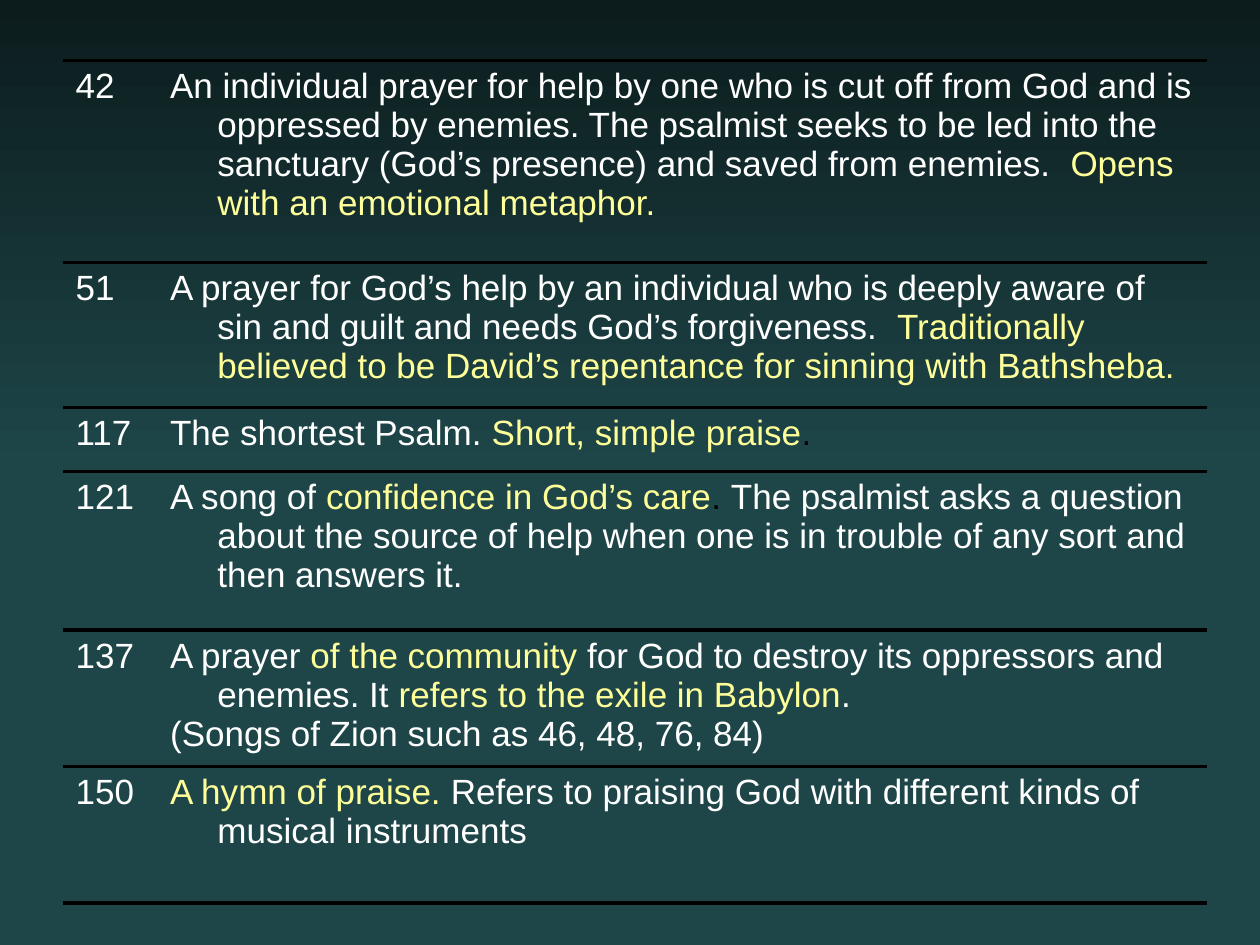
from copy import deepcopy
from pptx import Presentation
from pptx.dml.color import RGBColor
from pptx.oxml import parse_xml
from pptx.oxml.ns import nsdecls
from pptx.util import Pt

HUES = {"w": "FFFFFF", "y": "FFFF99", "k": "000000", "top": "0C1C1D", "base": "1E4649"}
STOPS = [(0, "top"), (0.5, "base"), (1, "base")]
COLS = [54, 600]
ROWS = [
    ("42", 115.2, [[
        ("An individual prayer for help by one who is cut off from God and is oppressed by enemies. "
         "The psalmist seeks to be led into the sanctuary (God’s presence) and saved from enemies.  ", "w"),
        ("Opens with an emotional metaphor.", "y")]]),
    ("51", 83, [[
        ("A prayer for God’s help by an individual who is deeply aware of sin and guilt "
         "and needs God’s forgiveness.  ", "w"),
        ("Traditionally believed to be David’s repentance for sinning with Bathsheba.", "y")]]),
    ("117", 36.7, [[
        ("The shortest Psalm. ", "w"), ("Short, simple praise", "y"), (".", "k")]]),
    ("121", 90.5, [[
        ("A song of ", "w"), ("confidence in God’s care", "y"), (". ", "k"),
        ("The psalmist asks a question about the source of help when one is in trouble "
         "of any sort and then answers it.", "w")]]),
    ("137", 78, [
        [("A prayer ", "w"), ("of the community ", "y"),
         ("for God to destroy its oppressors and enemies. It ", "w"),
         ("refers to the exile in Babylon", "y"), (".", "w")],
        [("(Songs of Zion such as 46, 48, 76, 84)", "w")]]),
    ("150", 78, [[
        ("A hymn of praise. ", "y"),
        ("Refers to praising God with different kinds of musical instruments", "w")]]),
]


def hue(key):
    return RGBColor.from_string(HUES[key])


def paint(slide):
    fill = slide.background.fill
    fill.gradient()
    fill.gradient_angle = 270
    last = slide.element.xpath(".//a:gs")[-1]
    last.addprevious(deepcopy(last))
    for stop, (pos, key) in zip(fill.gradient_stops, STOPS):
        stop.position = pos
        stop.color.rgb = hue(key)


def rule(cell):
    props = cell._tc.get_or_add_tcPr()
    for i, side in enumerate(("lnL", "lnR", "lnT", "lnB")):
        if side in ("lnT", "lnB"):
            body = f'<a:solidFill><a:srgbClr val="{HUES["k"]}"/></a:solidFill>'
        else:
            body = "<a:noFill/>"
        props.insert(i, parse_xml(f'<a:{side} {nsdecls("a")} w="{Pt(2.25)}">{body}</a:{side}>'))


def write(cell, paras):
    cell.fill.background()
    rule(cell)
    frame = cell.text_frame
    for i, runs in enumerate(paras):
        para = frame.add_paragraph() if i else frame.paragraphs[0]
        para.font.name, para.font.size, para.font.bold = "Arial", Pt(20), False
        props = para._p.get_or_add_pPr()
        props.set("marL", str(Pt(27)))
        props.set("indent", str(Pt(-27)))
        for words, key in runs:
            run = para.add_run()
            run.text = words
            run.font.name, run.font.size = "Arial", Pt(20)
            run.font.color.rgb = hue(key)


def main():
    deck = Presentation()
    deck.slide_width, deck.slide_height = Pt(720), Pt(540)
    slide = deck.slides.add_slide(deck.slide_layouts[6])
    paint(slide)
    high = sum(row[1] for row in ROWS)
    table = slide.shapes.add_table(
        len(ROWS), len(COLS), Pt(36), Pt(34.7), Pt(sum(COLS)), Pt(high)).table
    table.first_row = table.horz_banding = False
    for col, wide in zip(table.columns, COLS):
        col.width = Pt(wide)
    for i, (psalm, tall, paras) in enumerate(ROWS):
        table.rows[i].height = Pt(tall)
        write(table.cell(i, 0), [[(psalm, "w")]])
        write(table.cell(i, 1), paras)
    deck.save("out.pptx")


if __name__ == "__main__":
    main()
